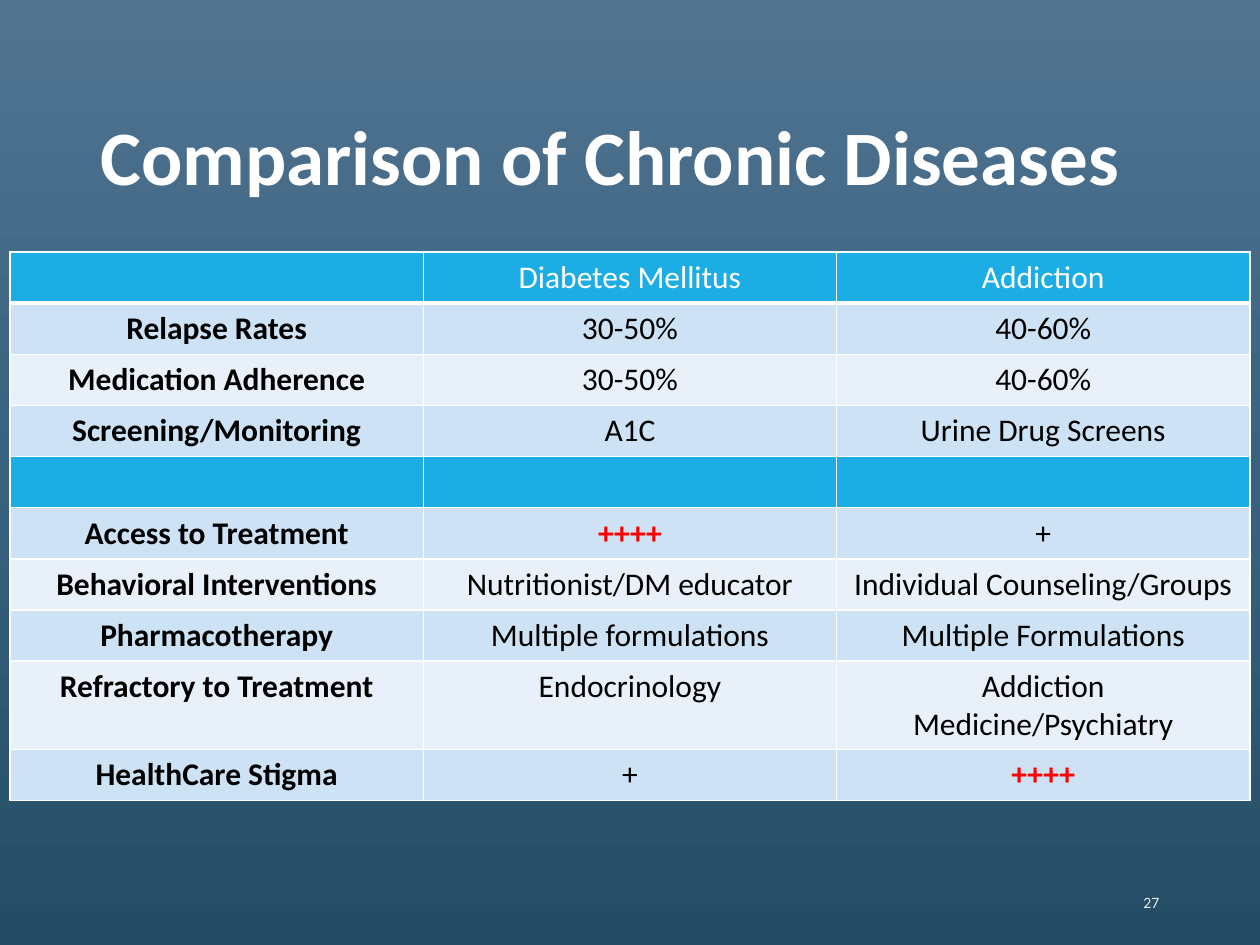
from copy import deepcopy
from dataclasses import dataclass

from lxml.etree import SubElement
from pptx import Presentation
from pptx.dml.color import RGBColor
from pptx.enum.text import MSO_ANCHOR, PP_ALIGN
from pptx.oxml.ns import qn
from pptx.util import Inches, Pt


@dataclass(frozen=True)
class Theme:
    font: str = "Calibri"
    title_size: int = 44
    table_size: int = 18
    number_size: int = 9
    white: str = "FFFFFF"
    ink: str = "000000"
    highlight: str = "FF0000"
    header: str = "1CADE4"
    bands: tuple = ("E8F1FA", "CDE3F5")
    backdrop: tuple = ((0, "517491"), (0.5, "38627F"), (1, "244C64"))
    number_fade: tuple = ((0, "9E9E9E"), (0.28, "EDEDED"), (1, "FFFFFF"))


THEME = Theme()
WIDTH, HEIGHT = Inches(10), Inches(7.5)
STRONG = "++++"
COMPARISON = (
    ("", "Diabetes Mellitus", "Addiction"),
    ("Relapse Rates", "30-50%", "40-60%"),
    ("Medication Adherence", "30-50%", "40-60%"),
    ("Screening/Monitoring", "A1C", "Urine Drug Screens"),
    ("", "", ""),
    ("Access to Treatment", STRONG, "+"),
    ("Behavioral Interventions", "Nutritionist/DM educator", "Individual Counseling/Groups"),
    ("Pharmacotherapy", "Multiple formulations", "Multiple Formulations"),
    ("Refractory to Treatment", "Endocrinology", "Addiction Medicine/Psychiatry"),
    ("HealthCare Stigma", "+", STRONG),
)


def apply_gradient(fill, owner, stops):
    fill.gradient()
    fill.gradient_angle = 270
    stop_list = owner.find(".//" + qn("a:gsLst"))
    while len(stop_list) < len(stops):
        stop_list.append(deepcopy(stop_list[0]))
    for stop, (position, color) in zip(fill.gradient_stops, stops):
        stop.position = position
        stop.color.rgb = RGBColor.from_string(color)


def style_font(font, size, color, bold=False):
    font.name, font.size, font.bold = THEME.font, Pt(size), bold
    font.color.rgb = RGBColor.from_string(color)


def add_line_of_text(slide, text, left, top, width, height, size, align, bold=False):
    box = slide.shapes.add_textbox(
        int(left * WIDTH), int(top * HEIGHT), int(width * WIDTH), int(height * HEIGHT)
    )
    frame = box.text_frame
    frame.word_wrap = True
    frame.vertical_anchor = MSO_ANCHOR.MIDDLE
    frame.text = text
    paragraph = frame.paragraphs[0]
    paragraph.alignment = align
    style_font(paragraph.runs[0].font, size, THEME.white, bold)
    return paragraph


def add_borders(cell, bottom_width):
    properties = cell._tc.get_or_add_tcPr()
    for side, width in (("L", 1), ("R", 1), ("T", 1), ("B", bottom_width)):
        border = SubElement(properties, qn(f"a:ln{side}"), w=str(Pt(width)))
        solid = SubElement(border, qn("a:solidFill"))
        SubElement(solid, qn("a:srgbClr"), val=THEME.white)


def fill_cell(cell, text, row, column):
    is_header = row == 0
    is_divider = not any(COMPARISON[row])
    add_borders(cell, 3 if is_header else 1)
    cell.fill.solid()
    background = THEME.header if is_header or is_divider else THEME.bands[row % 2]
    cell.fill.fore_color.rgb = RGBColor.from_string(background)
    cell.text = text
    paragraph = cell.text_frame.paragraphs[0]
    paragraph.alignment = PP_ALIGN.CENTER
    color = THEME.white if is_header else THEME.highlight if text == STRONG else THEME.ink
    bold = not is_header and (column == 0 or text == STRONG)
    for run in paragraph.runs:
        style_font(run.font, THEME.table_size, color, bold)


def add_comparison_table(slide):
    rows, columns = len(COMPARISON), len(COMPARISON[0])
    table = slide.shapes.add_table(
        rows, columns, Inches(0.08), Inches(2), Inches(9.84), Inches(4.06)
    ).table
    for row, entries in enumerate(COMPARISON):
        for column, text in enumerate(entries):
            fill_cell(table.cell(row, column), text, row, column)


def main():
    deck = Presentation()
    deck.slide_width, deck.slide_height = WIDTH, HEIGHT
    slide = deck.slides.add_slide(deck.slide_layouts[6])
    apply_gradient(slide.background.fill, slide._element, THEME.backdrop)
    title = add_line_of_text(
        slide, "Comparison of Chronic Diseases", 0.07, 0.09, 0.86, 0.16,
        THEME.title_size, PP_ALIGN.LEFT, bold=True,
    )
    title.line_spacing = 0.9
    add_comparison_table(slide)
    page_number = add_line_of_text(
        slide, "27", 0.71, 0.93, 0.22, 0.05, THEME.number_size, PP_ALIGN.RIGHT
    ).runs[0]
    apply_gradient(page_number.font.fill, page_number._r, THEME.number_fade)
    deck.save("out.pptx")


if __name__ == "__main__":
    main()
